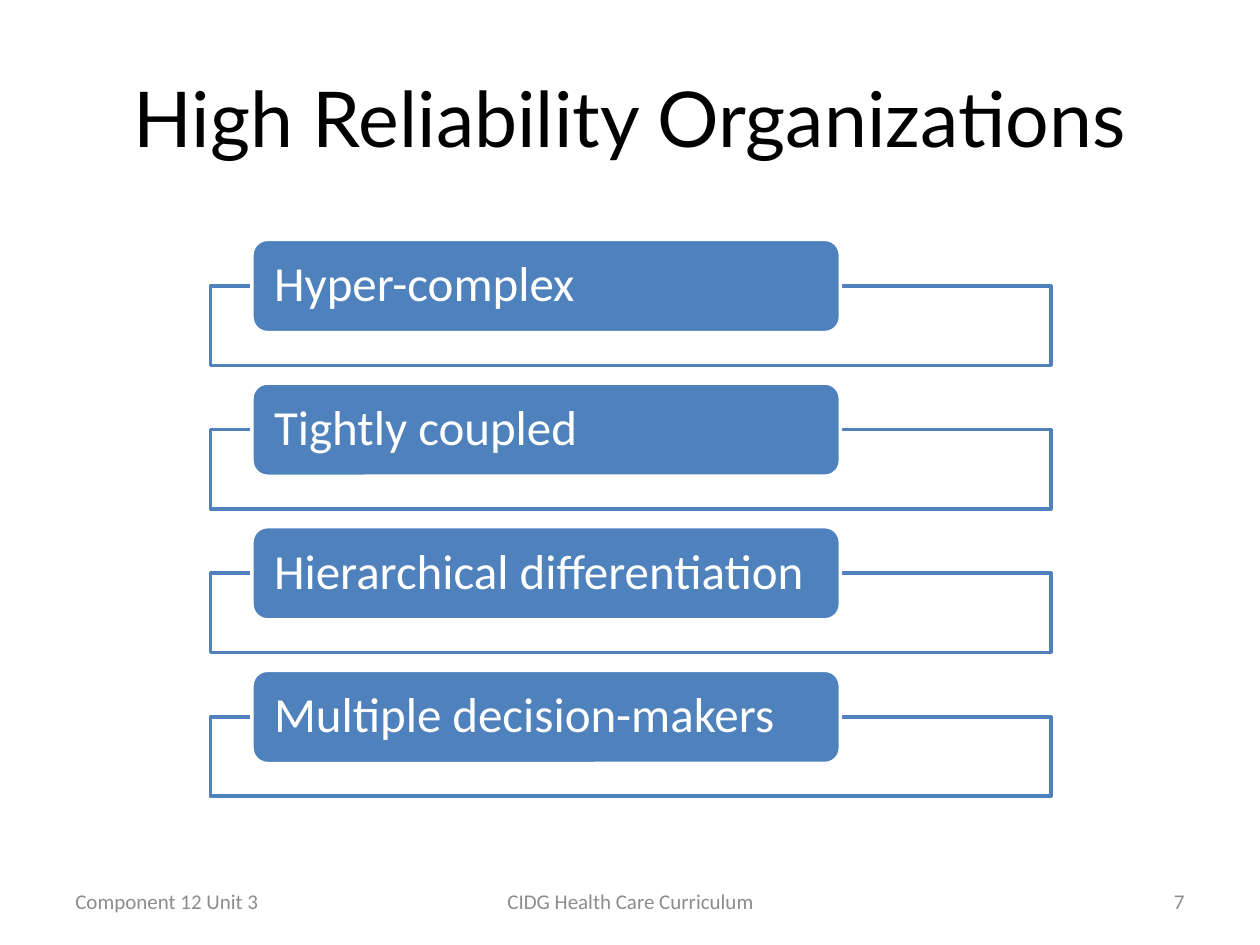
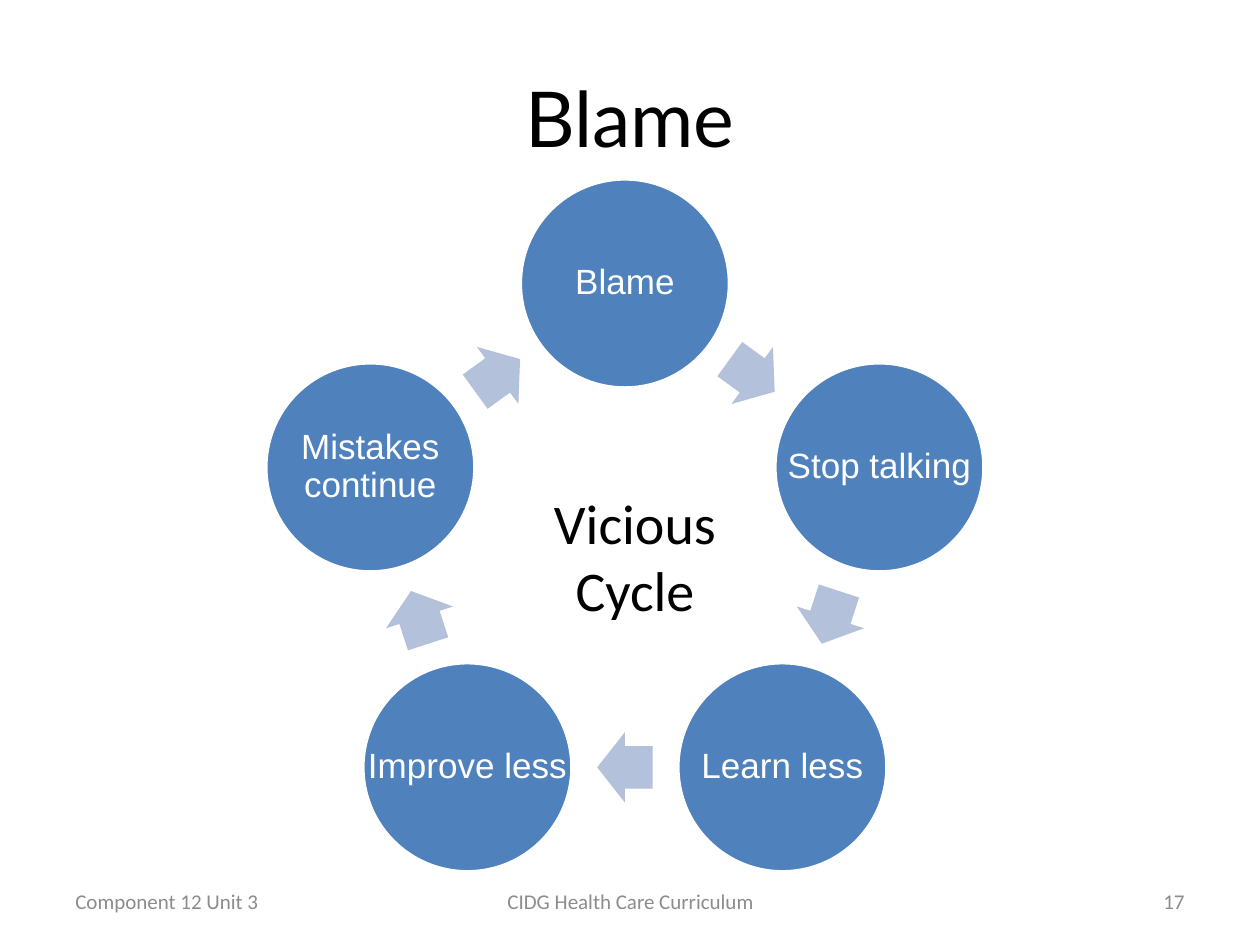
from math import cos, pi, sin
from typing import NamedTuple

from pptx import Presentation
from pptx.dml.color import RGBColor
from pptx.enum.shapes import MSO_SHAPE as Preset
from pptx.enum.text import MSO_ANCHOR as Anchor, PP_ALIGN as Align
from pptx.shapes.autoshape import Shape
from pptx.slide import Slide
from pptx.util import Emu, Pt

PX = 9144  # EMU per px, 100 px to the inch
COLORS = {
    "accent": "4F81BD",
    "arrow": "B3C1DB",
    "paper": "FFFFFF",
    "ink": "000000",
    "footer": "8C8C8C",
}


class Box(NamedTuple):
    left: int
    top: int
    width: int
    height: int


class TextStyle(NamedTuple):
    font: str
    size: int
    color: str
    align: Align = Align.CENTER
    anchor: Anchor = Anchor.MIDDLE
    inset_x: int = 10
    inset_y: int = 5
    spacing: float = 1.0
    wrap: bool = True


class FooterPart(NamedTuple):
    box: Box
    align: Align


TITLE = TextStyle("Lato", 44, "ink")
FOOTER = TextStyle("Calibri", 12, "footer")
TRAIT = TextStyle("Calibri", 28, "paper", Align.LEFT, inset_x=14, inset_y=0, spacing=0.9)
STAGE = TextStyle("Arial", 20, "paper", inset_x=3, inset_y=3, spacing=0.9, wrap=False)
CENTRE = TextStyle("Calibri", 32, "ink", anchor=Anchor.TOP)

TITLE_BOX = Box(50, 30, 900, 125)
UNIT = FooterPart(Box(50, 695, 233, 40), Align.LEFT)
COURSE = FooterPart(Box(342, 695, 317, 40), Align.CENTER)
NUMBER = FooterPart(Box(717, 695, 233, 40), Align.RIGHT)

TRAITS = ["Hyper-complex", "Tightly coupled", "Hierarchical differentiation",
          "Multiple decision-makers"]
TRAIT_PITCH = 114

# A vertical tab breaks the line inside a stage name
STAGES = ["Blame", "Stop talking", "Learn less", "Improve less", "Mistakes\vcontinue"]
CYCLE_X, CYCLE_Y, CYCLE_RADIUS = 496, 437, 212
STAGE_SIZE = 166
ARROW_WIDTH, ARROW_HEIGHT = 44, 56


def emu(box: Box) -> list[Emu]:
    return [Emu(length * PX) for length in box]


def rgb(name: str) -> RGBColor:
    return RGBColor.from_string(COLORS[name])


def write(holder: Shape, text: str, style: TextStyle) -> None:
    frame = holder.text_frame
    frame.text = text
    frame.word_wrap = style.wrap
    frame.vertical_anchor = style.anchor
    frame.margin_left = frame.margin_right = Emu(style.inset_x * PX)
    frame.margin_top = frame.margin_bottom = Emu(style.inset_y * PX)
    for paragraph in frame.paragraphs:
        paragraph.alignment = style.align
        paragraph.line_spacing = style.spacing
        for run in paragraph.runs:
            run.font.name = style.font
            run.font.size = Pt(style.size)
            run.font.color.rgb = rgb(style.color)


def add_text(slide: Slide, box: Box, text: str, style: TextStyle) -> None:
    write(slide.shapes.add_textbox(*emu(box)), text, style)


def add_preset(slide: Slide, preset: Preset, box: Box, fill: str,
               line: str | None = None) -> Shape:
    shape = slide.shapes.add_shape(preset, *emu(box))
    shape.shadow.inherit = False
    shape.fill.solid()
    shape.fill.fore_color.rgb = rgb(fill)
    if line:
        shape.line.color.rgb = rgb(line)
        shape.line.width = Pt(2)
    else:
        shape.line.fill.background()
    return shape


def add_base_slide(deck: Presentation, title: str, number: int) -> Slide:
    slide = deck.slides.add_slide(deck.slide_layouts[6])
    add_text(slide, TITLE_BOX, title, TITLE)
    for part, text in ((UNIT, "Component 12 Unit 3"),
                       (COURSE, "CIDG Health Care Curriculum"),
                       (NUMBER, str(number))):
        add_text(slide, part.box, text, FOOTER._replace(align=part.align))
    return slide


def on_cycle(angle: float, radius: float, width: int, height: int) -> Box:
    """Box centred on the cycle, with the angle clockwise from the top."""
    return Box(round(CYCLE_X + radius * sin(angle) - width / 2),
               round(CYCLE_Y - radius * cos(angle) - height / 2), width, height)


def add_traits(slide: Slide) -> None:
    for row, trait in enumerate(TRAITS):
        offset = row * TRAIT_PITCH
        add_preset(slide, Preset.RECTANGLE, Box(167, 227 + offset, 667, 63),
                   "paper", "accent")
        bar = add_preset(slide, Preset.ROUNDED_RECTANGLE,
                         Box(200, 190 + offset, 467, 74), "accent", "paper")
        write(bar, trait, TRAIT)


def add_cycle(slide: Slide) -> None:
    step = 2 * pi / len(STAGES)
    for index, stage in enumerate(STAGES):
        angle = index * step
        circle = add_preset(slide, Preset.OVAL,
                            on_cycle(angle, CYCLE_RADIUS, STAGE_SIZE, STAGE_SIZE),
                            "accent", "paper")
        write(circle, stage, STAGE)

        # The arrow sits halfway along the chord to the next stage
        halfway = angle + step / 2
        arrow = add_preset(slide, Preset.RIGHT_ARROW,
                           on_cycle(halfway, CYCLE_RADIUS * cos(step / 2),
                                    ARROW_WIDTH, ARROW_HEIGHT), "arrow")
        arrow.adjustments[0] = 0.6
        arrow.adjustments[1] = 0.5
        arrow.rotation = round(halfway * 180 / pi)
    add_text(slide, Box(425, 383, 158, 118), "Vicious\nCycle", CENTRE)


def main() -> None:
    deck = Presentation()
    deck.slide_width, deck.slide_height = Emu(1000 * PX), Emu(750 * PX)
    add_traits(add_base_slide(deck, "High Reliability Organizations", 7))
    add_cycle(add_base_slide(deck, "Blame", 17))
    deck.save("out.pptx")


if __name__ == "__main__":
    main()
